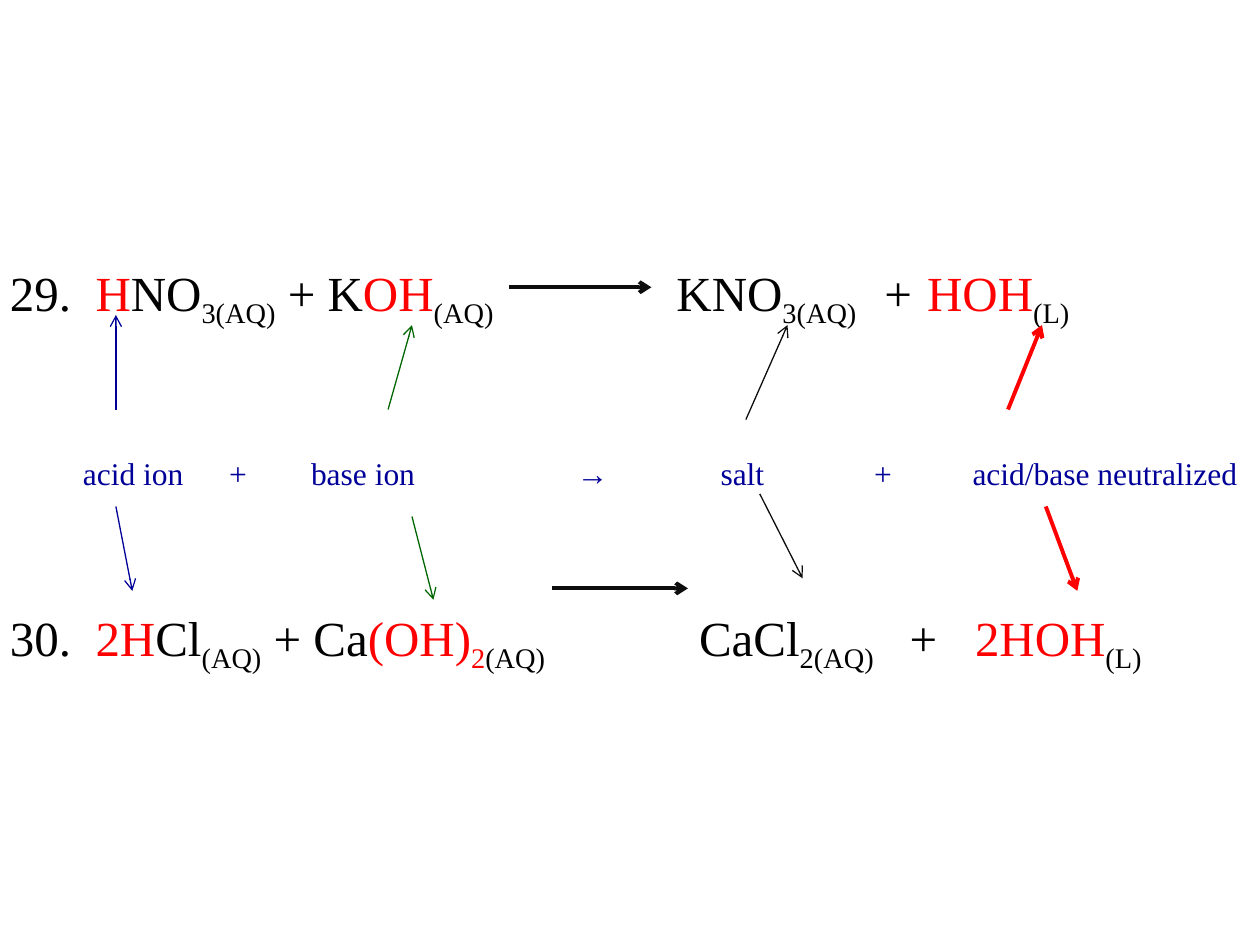
"""Build a slide comparing two acid and base neutralization equations."""
from lxml.etree import SubElement
from pptx import Presentation
from pptx.dml.color import RGBColor
from pptx.enum.shapes import MSO_CONNECTOR
from pptx.oxml.ns import qn
from pptx.util import Inches, Pt

THEME = {
    "font": "Times New Roman", "equation": 28, "label": 18, "thin": 0.75, "thick": 2.25,
    "black": "000000", "ink": "0D0D0D", "red": "FF0000", "blue": "000099", "green": "006600",
}
SUBSCRIPT = "-25000"

LINES = [
    {"size": "equation", "before": 0, "tabs": [0.68, 5.29, 6.94, 7.28], "spans": [
        ("29.\t", "black", False), ("H", "red", False), ("NO", "black", False),
        ("3(AQ)", "black", True), (" + K", "black", False), ("OH", "red", False),
        ("(AQ)", "black", True), ("\tKNO", "black", False), ("3(AQ)", "black", True),
        ("\t+\t", "black", False), ("HOH", "red", False), ("(L)", "black", True)]},
    {"size": "label", "before": 71.5, "tabs": [0.58, 1.74, 2.39, 4.5, 5.64, 6.86, 7.64], "spans": [
        ("\tacid ion\t+\tbase ion\t→\tsalt\t+\tacid/base neutralized", "blue", False)]},
    {"size": "equation", "before": 66, "tabs": [0.68, 5.47, 7.14, 7.66], "spans": [
        ("30.\t", "black", False), ("2H", "red", False), ("Cl", "black", False),
        ("(AQ)", "black", True), (" + Ca", "black", False), ("(OH)", "red", False),
        ("2", "red", True), ("(AQ)", "black", True), ("\tCaCl", "black", False),
        ("2(AQ)", "black", True), ("\t+\t", "black", False), ("2HOH", "red", False),
        ("(L)", "black", True)]},
]

ARROWS = [
    ((4.04, 2.28), (5.17, 2.28), "ink", "thick"),
    ((4.38, 4.67), (5.46, 4.67), "ink", "thick"),
    ((0.92, 3.25), (0.92, 2.5), "blue", "thin"),
    ((0.92, 4.02), (1.05, 4.69), "blue", "thin"),
    ((3.08, 3.25), (3.27, 2.58), "green", "thin"),
    ((3.27, 4.1), (3.44, 4.76), "green", "thin"),
    ((5.92, 3.33), (6.25, 2.58), "ink", "thin"),
    ((6.03, 3.92), (6.37, 4.59), "ink", "thin"),
    ((8, 3.25), (8.27, 2.58), "red", "thick"),
    ((8.3, 4.02), (8.55, 4.69), "red", "thick"),
]


def color(name):
    return RGBColor.from_string(THEME[name])


def fill_paragraph(para, line):
    para.space_before = Pt(line["before"])
    tab_list = SubElement(para._p.get_or_add_pPr(), qn("a:tabLst"))
    for position in line["tabs"]:
        SubElement(tab_list, qn("a:tab"), pos=str(Inches(position)), algn="l")
    para.font.name = THEME["font"]
    para.font.size = Pt(THEME[line["size"]])
    for text, tint, lowered in line["spans"]:
        span = para.add_run()
        span.text = text
        span.font.color.rgb = color(tint)
        if lowered:
            span._r.get_or_add_rPr().set("baseline", SUBSCRIPT)


def add_equations(page):
    box = page.shapes.add_textbox(Inches(-0.02), Inches(2), Inches(10.02), Inches(4.41))
    frame = box.text_frame
    frame.word_wrap = True
    frame.margin_top = Inches(0.08)
    for index, line in enumerate(LINES):
        fill_paragraph(frame.add_paragraph() if index else frame.paragraphs[0], line)


def add_arrow(page, start, end, tint, weight):
    points = [Inches(value) for value in start + end]
    arrow = page.shapes.add_connector(MSO_CONNECTOR.STRAIGHT, *points)
    arrow.line.color.rgb = color(tint)
    arrow.line.width = Pt(THEME[weight])
    SubElement(arrow.line._get_or_add_ln(), qn("a:tailEnd"), type="arrow")
    SubElement(arrow._element.spPr, qn("a:effectLst"))


def main():
    deck = Presentation()
    deck.slide_width, deck.slide_height = Inches(10), Inches(7.5)
    page = deck.slides.add_slide(deck.slide_layouts[6])
    add_equations(page)
    for arrow in ARROWS:
        add_arrow(page, *arrow)
    deck.save("out.pptx")


if __name__ == "__main__":
    main()
